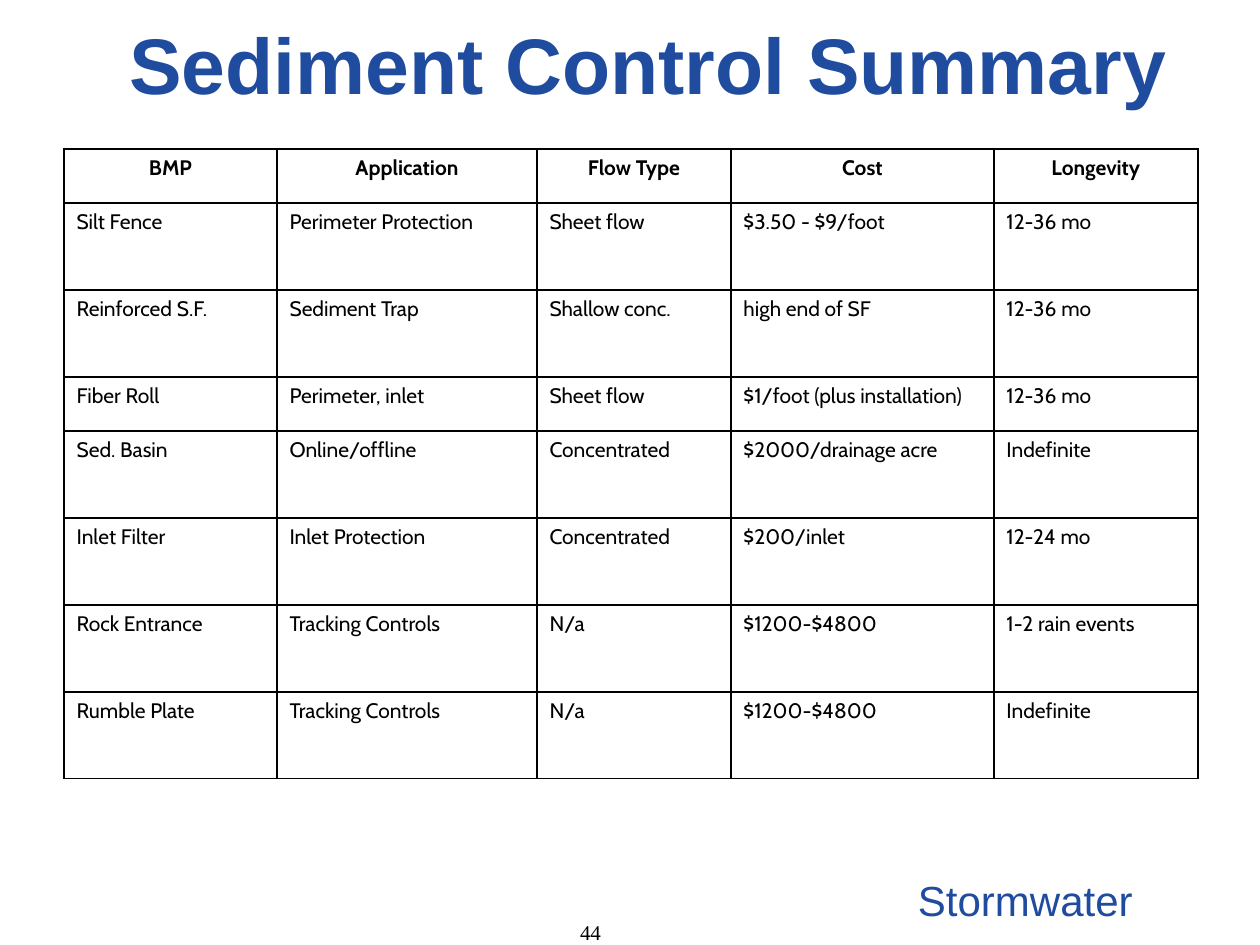
from lxml.etree import SubElement
from pptx import Presentation
from pptx.dml.color import RGBColor
from pptx.enum.text import MSO_ANCHOR as Anchor, PP_ALIGN as Align
from pptx.oxml.ns import qn
from pptx.util import Emu, Pt

BLUE, BLACK = "1F4C9E", "000000"
COLUMN_WIDTHS = [213, 260, 194, 263, 204]
SHORT_ROW, TALL_ROW = 54, 87
HANGING = 48
SHORT_ROWS = ("BMP", "Fiber Roll")
PRACTICES = [
    ("BMP", "Application", "Flow Type", "Cost", "Longevity"),
    ("Silt Fence", "Perimeter Protection", "Sheet flow", "$3.50 - $9/foot", "12-36 mo"),
    ("Reinforced S.F.", "Sediment Trap", "Shallow conc.", "high end of SF", "12-36 mo"),
    ("Fiber Roll", "Perimeter, inlet", "Sheet flow", "$1/foot (plus installation)", "12-36 mo"),
    ("Sed. Basin", "Online/offline", "Concentrated", "$2000/drainage acre", "Indefinite"),
    ("Inlet Filter", "Inlet Protection", "Concentrated", "$200/inlet", "12-24 mo"),
    ("Rock Entrance", "Tracking Controls", "N/a", "$1200-$4800", "1-2 rain events"),
    ("Rumble Plate", "Tracking Controls", "N/a", "$1200-$4800", "Indefinite"),
]


def px(length):
    return Emu(round(length * 914400 / 126))


def color(hex_code):
    return RGBColor.from_string(hex_code)


def write(frame, text, font, size, hex_code, align, bold=False, spacing=None):
    frame.word_wrap = True
    paragraph = frame.paragraphs[0]
    paragraph.alignment = align
    paragraph.line_spacing = spacing
    run = paragraph.add_run()
    run.text = text
    run.font.name = font
    run.font.size = Pt(size)
    run.font.bold = bold
    run.font.color.rgb = color(hex_code)
    return paragraph


def add_title(slide, text):
    title = slide.shapes.title
    title.left, title.top, title.width, title.height = map(px, (81, 25, 1134, 88))
    title.text_frame.vertical_anchor = Anchor.MIDDLE
    write(title.text_frame, text, "Arial", 45, BLUE, Align.CENTER, True, 0.9)


def add_label(slide, box, text, font, size, hex_code, spacing=None):
    label = slide.shapes.add_textbox(*map(px, box)).text_frame
    write(label, text, font, size, hex_code, Align.RIGHT, spacing=spacing)
    return label


def border_cell(cell):
    properties = cell._tc.get_or_add_tcPr()
    for side in ("a:lnL", "a:lnR", "a:lnT", "a:lnB"):
        line = SubElement(properties, qn(side), w=str(Pt(1)))
        fill = SubElement(line, qn("a:solidFill"))
        SubElement(fill, qn("a:srgbClr"), val=BLACK)


def fill_cell(cell, text, is_header):
    align = Align.CENTER if is_header else Align.LEFT
    paragraph = write(cell.text_frame, text, "Cabin", 12, BLACK, align, is_header)
    indents = paragraph._p.get_or_add_pPr()
    indents.set("marL", str(px(HANGING)))
    indents.set("indent", str(px(-HANGING)))
    border_cell(cell)
    cell.fill.background()


def add_summary(slide, left, top):
    heights = [SHORT_ROW if row[0] in SHORT_ROWS else TALL_ROW for row in PRACTICES]
    box = map(px, (left, top, sum(COLUMN_WIDTHS), sum(heights)))
    summary = slide.shapes.add_table(len(PRACTICES), len(COLUMN_WIDTHS), *box).table
    summary.first_row = summary.horz_banding = False
    for column, width in zip(summary.columns, COLUMN_WIDTHS):
        column.width = px(width)
    for r, (practice, height) in enumerate(zip(PRACTICES, heights)):
        summary.rows[r].height = px(height)
        for c, text in enumerate(practice):
            fill_cell(summary.cell(r, c), text, r == 0)


def add_page_number(slide, number):
    frame = add_label(slide, (257, 900, 399, 45), number, "Times New Roman", 12, BLACK)
    frame.margin_left = frame.margin_top = frame.margin_bottom = 0
    frame.margin_right = px(55)
    frame.vertical_anchor = Anchor.BOTTOM


def main():
    deck = Presentation()
    deck.slide_width, deck.slide_height = px(1260), px(945)
    slide = deck.slides.add_slide(deck.slide_layouts[5])
    slide.background.fill.solid()
    slide.background.fill.fore_color.rgb = color("FFFFFF")
    add_label(slide, (852, 874, 293, 61), "Stormwater", "Arial", 24, BLUE, 0.9)
    add_title(slide, "Sediment Control Summary")
    add_summary(slide, 64, 149)
    add_page_number(slide, "44")
    deck.save("out.pptx")


if __name__ == "__main__":
    main()
